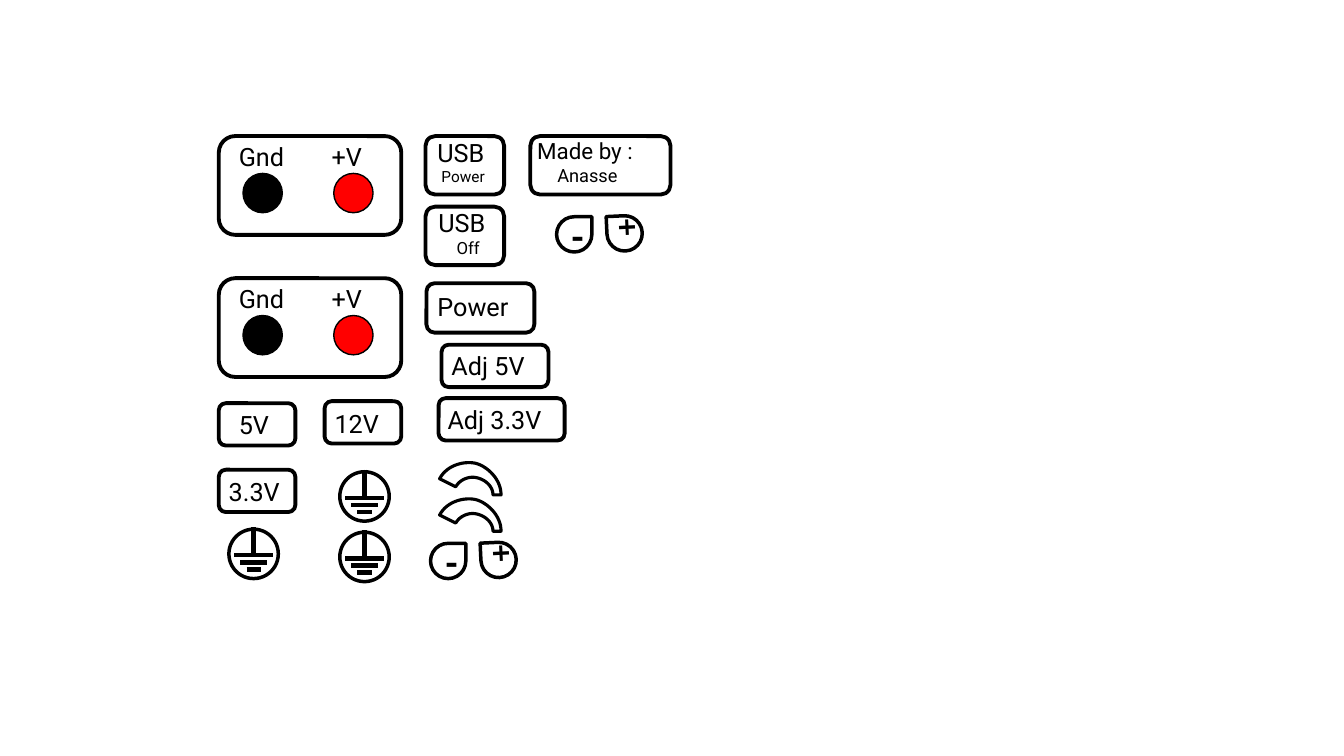
from dataclasses import dataclass

from pptx import Presentation
from pptx.dml.color import RGBColor
from pptx.enum.shapes import MSO_CONNECTOR, MSO_SHAPE
from pptx.enum.text import MSO_ANCHOR, PP_ALIGN
from pptx.oxml.ns import qn
from pptx.util import Inches, Pt
from lxml import etree

ROUNDED, OVAL, TEARDROP = MSO_SHAPE.ROUNDED_RECTANGLE, MSO_SHAPE.OVAL, MSO_SHAPE.TEAR
STRAIGHT = MSO_CONNECTOR.STRAIGHT
MIDDLE = MSO_ANCHOR.MIDDLE
LEFT, CENTER = PP_ALIGN.LEFT, PP_ALIGN.CENTER


@dataclass(frozen=True)
class Theme:
    ink: RGBColor = RGBColor(0, 0, 0)
    paper: RGBColor = RGBColor(255, 255, 255)
    live: RGBColor = RGBColor(255, 0, 0)
    label_font: str = "Roboto"
    sign_font: str = "Calibri"
    label_size: float = 18
    frame_line: float = 2.75
    symbol_line: float = 2.5
    arc_line: float = 2.25
    bar_line: float = 3
    socket_line: float = 1


THEME = Theme()

# Column edges of the sticker sheet, in inches
COL_1, COL_2, COL_3, COL_4 = 2.17, 3.22, 4.22, 5.26
ROW_1 = 1.35


def paint(shape, fill, line_width):
    shape.shadow.inherit = False
    shape.fill.solid()
    shape.fill.fore_color.rgb = fill
    shape.line.color.rgb = THEME.ink
    shape.line.width = Pt(line_width)
    return shape


def add_outline(shapes, kind, left, top, width, height, fill, line_width):
    shape = shapes.add_shape(kind, Inches(left), Inches(top), Inches(width), Inches(height))
    return paint(shape, fill, line_width)


def style_run(paragraph, size, font, bold=False):
    run = paragraph.runs[0]
    run.font.size = Pt(size)
    run.font.name = font
    run.font.bold = bold
    run.font.color.rgb = THEME.ink


def add_caption(shapes, left, top, width, lines):
    """Each line is (text, size, indent, alignment)."""
    box = shapes.add_textbox(Inches(left), Inches(top), Inches(width), Inches(0.4))
    frame = box.text_frame
    frame.word_wrap = True
    frame.text = "\n".join(line[0] for line in lines)
    for paragraph, (_, size, indent, alignment) in zip(frame.paragraphs, lines):
        paragraph.alignment = alignment
        paragraph._p.get_or_add_pPr().set("marL", str(Inches(indent)))
        style_run(paragraph, size, THEME.label_font)


def add_label(shapes, left, top, width, height, inset, lines, caption_width):
    """Framed label; inset is the caption's offset from the frame corner."""
    add_outline(shapes, ROUNDED, left, top, width, height, THEME.paper, THEME.frame_line)
    add_caption(shapes, left + inset[0], top + inset[1], caption_width, lines)


def add_terminal_panel(slide, left, top):
    shapes = slide.shapes.add_group_shape().shapes
    add_outline(shapes, ROUNDED, left, top, 1.81, 0.98, THEME.paper, THEME.frame_line)
    sockets = [("Gnd", THEME.ink, 0.24, 0.1, 0.74), ("+V", THEME.live, 1.14, 1.02, 0.56)]
    for name, colour, socket_x, name_x, name_width in sockets:
        add_outline(shapes, OVAL, left + socket_x, top + 0.37, 0.39, 0.39,
                    colour, THEME.socket_line)
        add_caption(shapes, left + name_x, top, name_width,
                    [(name, THEME.label_size, 0, LEFT)])


def add_bar(shapes, x1, y1, x2, y2):
    bar = shapes.add_connector(STRAIGHT, Inches(x1), Inches(y1), Inches(x2), Inches(y2))
    bar.line.color.rgb = THEME.ink
    bar.line.width = Pt(THEME.bar_line)
    etree.SubElement(bar._element.spPr, qn("a:effectLst"))


def add_ground(slide, left, top, size=0.49):
    shapes = slide.shapes.add_group_shape().shapes
    add_outline(shapes, OVAL, left, top, size, size, THEME.paper, THEME.symbol_line)
    centre = left + size / 2
    add_bar(shapes, centre, top - 0.02, centre, top + 0.27)
    for step, bar_width in enumerate((0.38, 0.26, 0.14)):
        y = top + 0.26 + 0.07 * step
        add_bar(shapes, centre - bar_width / 2, y, centre + bar_width / 2, y)


def add_sign_pair(slide, left, top):
    """Minus and plus drops; the plus is turned to point the other way."""
    signs = [("+", 24, 0.5, 0, 267.2), ("-", 28, 0, 0.01, 0)]
    for sign, size, dx, dy, turn in signs:
        drop = add_outline(slide.shapes, TEARDROP, left + dx, top + dy, 0.35, 0.35,
                           THEME.paper, THEME.symbol_line)
        drop.rotation = turn
        frame = drop.text_frame
        frame.text = sign
        frame.vertical_anchor = MIDDLE
        frame.paragraphs[0].alignment = CENTER
        style_run(frame.paragraphs[0], size, THEME.sign_font, bold=True)


def curve(start, pull_1, pull_2, end, steps=16):
    """Points along a cubic curve, start left out."""
    for t in (i / steps for i in range(1, steps + 1)):
        weights = ((1 - t) ** 3, 3 * t * (1 - t) ** 2, 3 * t * t * (1 - t), t ** 3)
        yield tuple(sum(w * p[axis] for w, p in zip(weights, (start, pull_1, pull_2, end)))
                    for axis in (0, 1))


def add_arc(slide, left, top):
    outline = [(0, 0.16),
               *curve((0, 0.16), (0.08, 0.01), (0.27, -0.02), (0.37, 0.01)),
               *curve((0.37, 0.01), (0.47, 0.04), (0.61, 0.16), (0.61, 0.32)),
               (0.53, 0.32),
               *curve((0.53, 0.32), (0.53, 0.24), (0.46, 0.17), (0.37, 0.15)),
               *curve((0.37, 0.15), (0.29, 0.13), (0.2, 0.17), (0.16, 0.24))]
    points = [(Inches(left + x), Inches(top + y)) for x, y in outline]
    builder = slide.shapes.build_freeform(*points[0])
    builder.add_line_segments(points[1:], close=True)
    paint(builder.convert_to_shape(), THEME.paper, THEME.arc_line)


def add_plain_labels(slide):
    """Labels with one caption line."""
    labels = [("12V", COL_2, 3.98, 0.76, 0.42, (0, 0.02), 0.72),
              ("5V", COL_1, 4.0, 0.76, 0.42, (0.1, 0.01), 0.56),
              ("3.3V", COL_1, 4.66, 0.76, 0.42, (0, 0.02), 0.79),
              ("Power", COL_3 + 0.01, 2.81, 1.07, 0.49, (0.01, 0.03), 1.01),
              ("Adj 5V", 4.38, 3.42, 1.06, 0.42, (0, 0.01), 1.07),
              ("Adj 3.3V", 4.35, 3.95, 1.25, 0.42, (-0.01, 0.01), 1.18)]
    for text, left, top, width, height, inset, caption_width in labels:
        add_label(slide.shapes, left, top, width, height, inset,
                  [(text, THEME.label_size, 0, LEFT)], caption_width)


def add_two_line_labels(slide):
    usb = ("USB", THEME.label_size, 0, LEFT)
    labels = [(COL_3, ROW_1, 0.78, 0.02, [usb, ("Power", 11, 0.04, LEFT)], 0.74),
              (COL_3, ROW_1 + 0.7, 0.78, 0.03, [usb, ("Off", 12, 0.18, LEFT)], 0.72),
              (COL_4, ROW_1, 1.39, -0.03,
               [("Made by :", 16, 0, LEFT), ("Anasse", 13, 0, CENTER)], 1.19)]
    for left, top, width, inset_x, lines, caption_width in labels:
        add_label(slide.shapes, left, top, width, 0.58, (inset_x, -0.04),
                  lines, caption_width)


def build_label_sheet(slide):
    # Output terminals
    for top in (ROW_1, ROW_1 + 1.41):
        add_terminal_panel(slide, COL_1, top)
    # Framed labels
    add_plain_labels(slide)
    add_two_line_labels(slide)
    # Earth symbols
    for left, top in ((3.37, 4.68), (2.27, 5.25), (3.37, 5.28)):
        add_ground(slide, left, top)
    # Adjustment marks
    for top in (4.95, 4.59):
        add_arc(slide, 4.36, top)
    for left, top in ((4.27, 5.38), (5.52, 2.14)):
        add_sign_pair(slide, left, top)


def main():
    deck = Presentation()
    deck.slide_width, deck.slide_height = Inches(13.33), Inches(7.5)
    build_label_sheet(deck.slides.add_slide(deck.slide_layouts[6]))
    deck.save("out.pptx")


if __name__ == "__main__":
    main()
